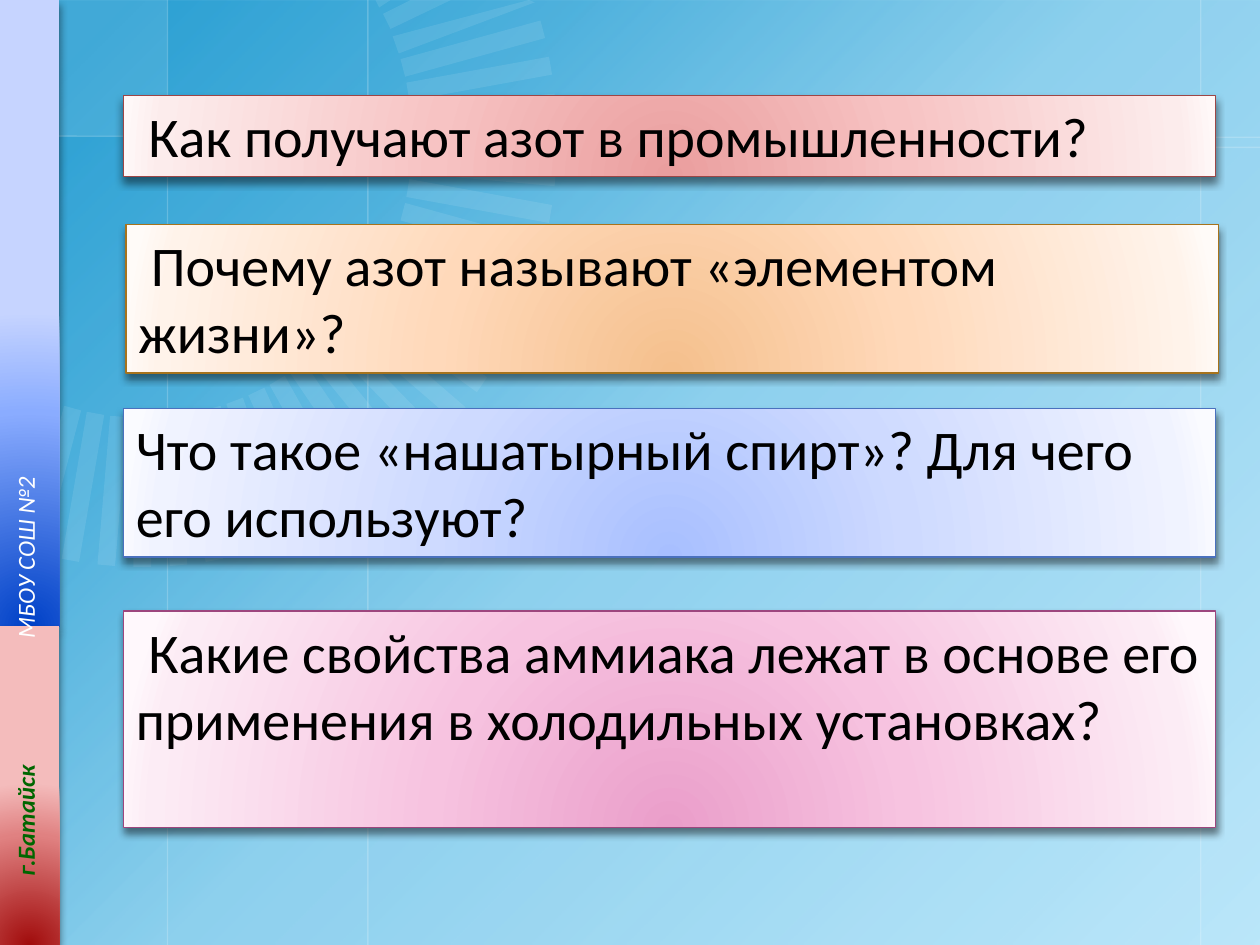
from math import cos, radians, sin

from lxml.etree import SubElement
from pptx import Presentation
from pptx.dml.color import RGBColor
from pptx.enum.shapes import MSO_CONNECTOR, MSO_SHAPE
from pptx.enum.text import MSO_ANCHOR, PP_ALIGN
from pptx.oxml.ns import qn
from pptx.util import Inches, Pt

WIDTH, HEIGHT = 10, 7.5
BAR_WIDTH, BAR_SPLIT = 0.47, 4.97
CARD_WIDTH = 8.67
FONT = "Calibri"
SPOKE_ANGLES = [*range(-20, 0, 5), *range(5, 20, 5), *range(35, 110, 5)]

CARDS = [
    (0.98, 0.76, 0.64, 0.1, "Как получают азот в промышленности?", "9D4646",
     ["EA9E9E", "F7C3C3", "FCECEC", "FFF8F8"]),
    (1, 1.78, 1.18, 0.1, "Почему азот называют «элементом жизни»?", "A7731C",
     ["F5C08D", "FFD9BA", "FFF3EA", "FFFBF8"]),
    (0.98, 3.24, 1.18, 0, "Что такое «нашатырный спирт»? Для чего его используют?", "4A71BE",
     ["A8BFFF", "CEDAFF", "F0F3FF", "FAFBFF"]),
    (0.98, 4.85, 1.72, 0.1,
     "Какие свойства аммиака лежат в основе его применения в холодильных установках?", "9D467E",
     ["EA9ECA", "F7C3E0", "FCECF5", "FFF8FC"]),
]


def color(value):
    return RGBColor.from_string(value)


def add_node(parent, tag, **attributes):
    return SubElement(parent, qn(tag), {key: str(value) for key, value in attributes.items()})


def set_alpha(node, percent):
    add_node(node, "a:alpha", val=percent * 1000)


def paint(shape, value, alpha):
    shape.shadow.inherit = False
    shape.fill.solid()
    shape.fill.fore_color.rgb = color(value)
    set_alpha(shape.fill._xPr.find(".//" + qn("a:srgbClr")), alpha)
    shape.line.fill.background()


def paint_gradient(shape, stops, angle=None):
    shape.shadow.inherit = False
    shape.line.fill.background()
    shape.fill.gradient()
    gradient = shape.fill._xPr.find(qn("a:gradFill"))
    for child in list(gradient):
        gradient.remove(child)
    stop_list = add_node(gradient, "a:gsLst")
    for position, value, alpha in stops:
        stop = add_node(stop_list, "a:gs", pos=position * 1000)
        set_alpha(add_node(stop, "a:srgbClr", val=value), alpha)
    if angle is None:
        radial = add_node(gradient, "a:path", path="circle")
        add_node(radial, "a:fillToRect", l=50000, t=130000, r=50000, b=-30000)
    else:
        add_node(gradient, "a:lin", ang=angle * 60000, scaled=0)


def drop_shadow(shape):
    effects = shape._element.spPr.find(qn("a:effectLst"))
    shadow = add_node(effects, "a:outerShdw", blurRad=Pt(4.5), dist=Pt(3),
                      dir=5400000, algn="ctr", rotWithShape=0)
    set_alpha(add_node(shadow, "a:srgbClr", val="000000"), 48)


def add_box(page, left, top, width, height):
    return page.shapes.add_shape(MSO_SHAPE.RECTANGLE, *map(Inches, (left, top, width, height)))


def add_line(page, start, end):
    line = page.shapes.add_connector(MSO_CONNECTOR.STRAIGHT, *map(Inches, (*start, *end)))
    line.line.color.rgb = color("FFFFFF")
    line.line.width = Pt(0.75)
    properties = line._element.spPr
    set_alpha(properties.find(".//" + qn("a:srgbClr")), 20)
    add_node(properties, "a:effectLst")


def add_polygon(page, points):
    corners = [(Inches(across), Inches(down)) for across, down in points]
    builder = page.shapes.build_freeform(*corners[0])
    builder.add_line_segments(corners[1:], close=True)
    paint(builder.convert_to_shape(), "F2FAFE", 10)


def add_text(para, text, size=32, value="000000", bold=False, italic=False):
    span = para.add_run()
    span.text = text
    span.font.name = FONT
    span.font.size = Pt(size)
    span.font.bold = bold
    span.font.italic = italic
    span.font.color.rgb = color(value)


def add_spoke(page, degrees):
    across, down = cos(radians(degrees)), sin(radians(degrees))
    inner, outer, half = 2.14, 3.29, 0.07
    corners = [(inner, -half), (outer, -half), (outer, half), (inner, half)]
    points = [(1.13 + radius * across - side * down,
               max(0, 1.11 + 1.03 * (radius * down + side * across)))
              for radius, side in corners]
    add_polygon(page, points)


def add_backdrop(page):
    page.background.fill.solid()
    page.background.fill.fore_color.rgb = color("BCE7FA")
    wash = add_box(page, 0, 0, WIDTH, HEIGHT)
    paint_gradient(wash, [(position, "0F92CC", alpha) for position, alpha in
                          [(6, 83), (26, 63), (50, 27), (100, 0)]], angle=45)
    paint(add_box(page, 0, 0, 1.33, 1.08), "FFFFFF", 10)
    for left in (1.33, 9.53, 2.92):
        add_line(page, (left, 0), (left, HEIGHT))
    add_line(page, (0, 1.08), (WIDTH, 1.09))
    add_line(page, (6.33, 1.17), (WIDTH, 1.17))
    add_polygon(page, [(2.98, 0), (3.1, 0), (3.01, 0.06)])
    add_polygon(page, [(3.26, 0), (3.58, 0), (3.1, 0.23), (3.04, 0.11)])
    for degrees in SPOKE_ANGLES:
        add_spoke(page, degrees)


def add_card(page, left, top, height, indent, text, edge, shades):
    card = add_box(page, left, top, CARD_WIDTH, height)
    paint_gradient(card, [(position, shade, 100) for position, shade in zip((0, 43, 93, 100), shades)])
    card.line.color.rgb = color(edge)
    card.line.width = Pt(0.75)
    drop_shadow(card)
    frame = card.text_frame
    frame.word_wrap = True
    frame.vertical_anchor = MSO_ANCHOR.TOP
    para = frame.paragraphs[0]
    para.alignment = PP_ALIGN.LEFT
    para._p.get_or_add_pPr().set("indent", str(Inches(indent)))
    add_text(para, text)


def add_side_bar(page):
    for top, bottom, shades in [(0, BAR_SPLIT, ("0041C7", "8AACFF", "C6D4FF")),
                                (BAR_SPLIT, HEIGHT, ("A10C0C", "E08181", "F4BCBC"))]:
        bar = add_box(page, 0, top, BAR_WIDTH, bottom - top)
        paint_gradient(bar, [(position, shade, 100) for position, shade in zip((0, 68, 100), shades)])
        drop_shadow(bar)
    box = page.shapes.add_textbox(*map(Inches, (-3.3, 3.8, 7, 0.4)))
    box.rotation = 270
    frame = box.text_frame
    frame.word_wrap = True
    frame.vertical_anchor = MSO_ANCHOR.MIDDLE
    frame.margin_left = Inches(0.54)
    para = frame.paragraphs[0]
    tabs = add_node(para._p.get_or_add_pPr(), "a:tabLst")
    add_node(tabs, "a:tab", pos=Inches(1.89), algn="l")
    add_text(para, "г.Батайск\t", size=14, value="006600", bold=True, italic=True)
    add_text(para, "МБОУ СОШ №2", size=14, value="FFFFFF", italic=True)


def main():
    deck = Presentation()
    deck.slide_width, deck.slide_height = Inches(WIDTH), Inches(HEIGHT)
    page = deck.slides.add_slide(deck.slide_layouts[6])
    add_backdrop(page)
    for card in CARDS:
        add_card(page, *card)
    add_side_bar(page)
    deck.save("out.pptx")


if __name__ == "__main__":
    main()
